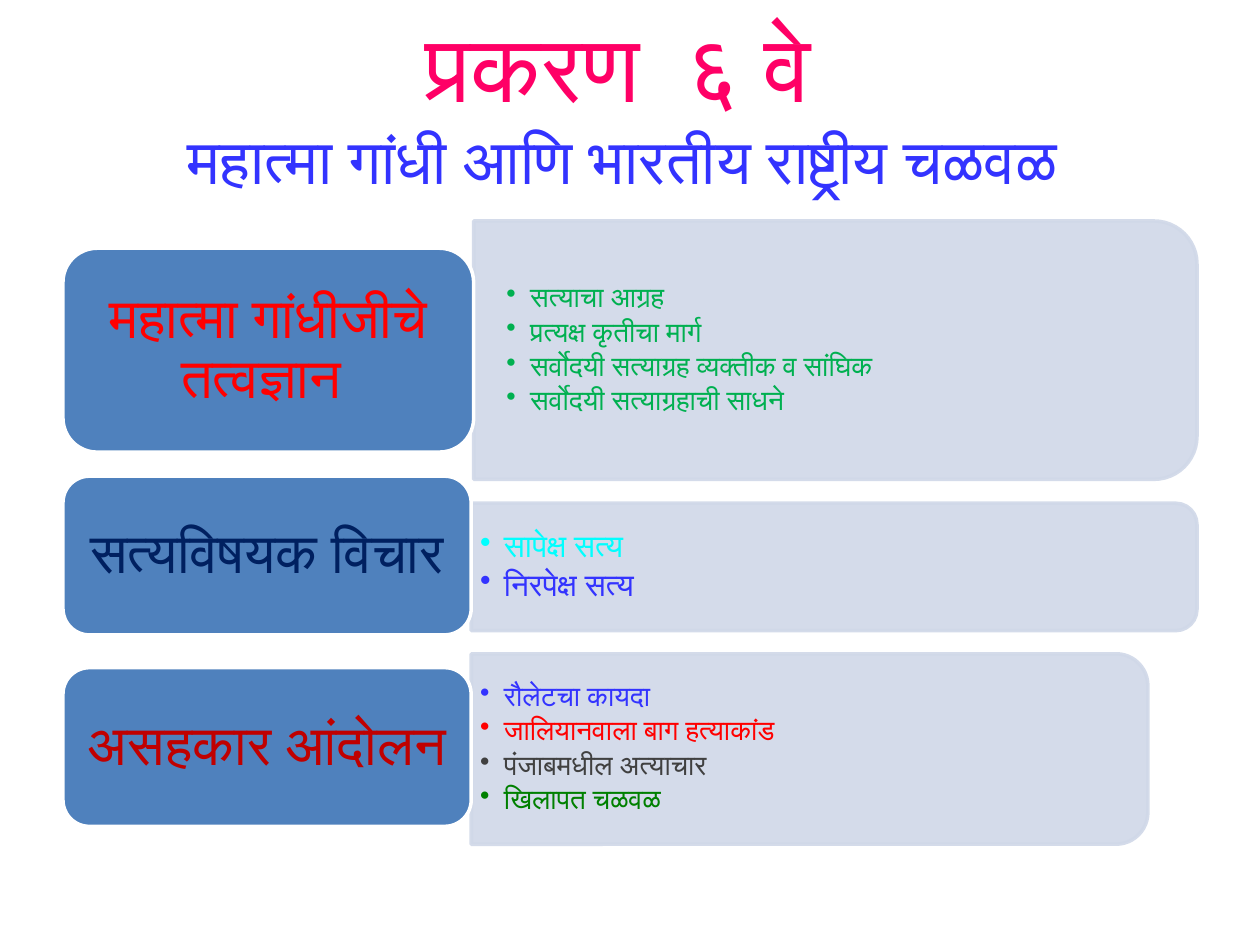
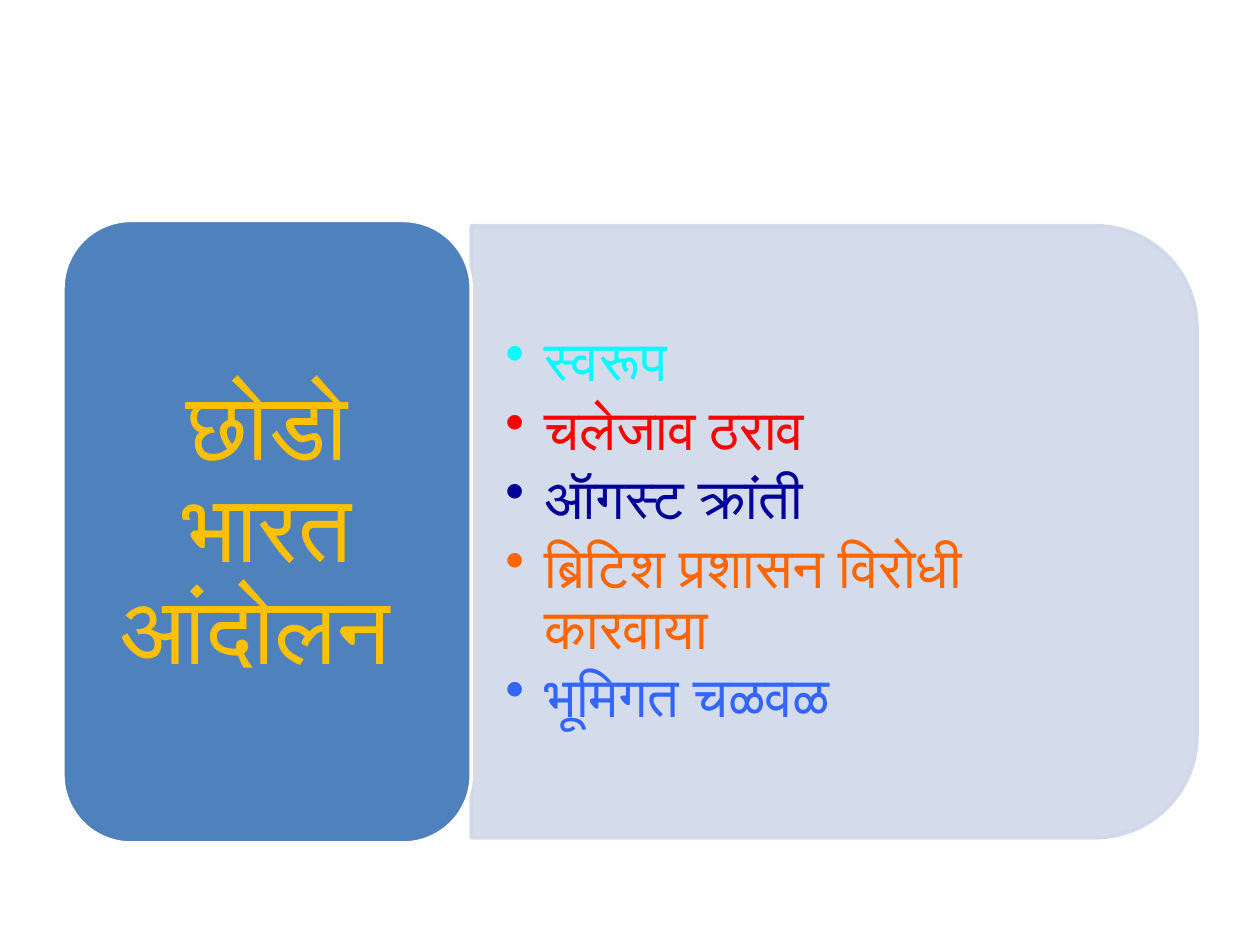
"""Builds two Marathi slides on Gandhi and the national movement."""
from dataclasses import dataclass

from lxml import etree
from pptx import Presentation
from pptx import util as u
from pptx.dml.color import RGBColor
from pptx.enum import shapes, text
from pptx.oxml.ns import qn


@dataclass(frozen=True)
class Theme:
    """Colours, type sizes and shared measures in centimetres."""
    font: str = "Calibri"
    label_fill: str = "4F81BD"
    panel_fill: str = "D0D8E8"
    white: str = "FFFFFF"
    pink: str = "FF0066"
    blue: str = "3333FF"
    red: str = "FF0000"
    green: str = "00B050"
    cyan: str = "00FFFF"
    navy: str = "002060"
    dark_red: str = "C00000"
    grey: str = "404040"
    forest: str = "008000"
    deep_blue: str = "000099"
    orange: str = "FF6600"
    sky: str = "3366FF"
    gold: str = "FFC000"
    chapter: int = 54
    subtitle: int = 36
    label: int = 32
    big_label: int = 54
    small: int = 16
    medium: int = 18
    large: int = 32
    line: int = 2
    left: float = 1.27
    line_spacing: float = 0.9
    corner_inset: float = 0.05


THEME = Theme()


@dataclass(frozen=True)
class Label:
    """The rounded heading box at the left of a row."""
    words: str
    color: str
    middle: float
    height: float
    width: float = 8.23
    size: int = THEME.label


@dataclass(frozen=True)
class Panel:
    """The pale bullet panel at the right of a row."""
    middle: float
    width: float
    height: float
    margin: float
    size: int
    bullets: tuple
    indent: float = 0.48


CHAPTER_ROWS = (
    (Label("महात्मा गांधीजीचे तत्वज्ञान ", THEME.red, 7.06, 4.11, width=8.28),
     Panel(7.06, 14.58, 5.21, 0.66, THEME.small, (
         ("सत्याचा आग्रह", THEME.green),
         ("प्रत्यक्ष कृतीचा मार्ग", THEME.green),
         ("सर्वोदयी सत्याग्रह व्यक्तीक व सांघिक", THEME.green),
         ("सर्वोदयी सत्याग्रहाची साधने", THEME.green)))),
    (Label("सत्यविषयक विचार ", THEME.navy, 11.2, 3.2),
     Panel(11.43, 14.63, 2.57, 0.18, THEME.medium, (
         ("सापेक्ष सत्य", THEME.cyan),
         ("निरपेक्ष सत्य", THEME.blue)))),
    (Label("असहकार आंदोलन ", THEME.dark_red, 15.06, 3.2),
     Panel(15.1, 13.64, 3.84, 0.18, THEME.small, (
         ("रौलेटचा कायदा", THEME.blue),
         ("जालियानवाला बाग हत्याकांड", THEME.red),
         ("पंजाबमधील अत्याचार", THEME.grey),
         ("खिलापत चळवळ", THEME.forest)))),
)
QUIT_INDIA_ROWS = (
    (Label("छोडो भारत आंदोलन ", THEME.gold, 10.72, 12.55, size=THEME.big_label),
     Panel(10.72, 14.63, 12.34, 0.69, THEME.large, (
         ("स्वरूप", THEME.cyan),
         ("चलेजाव ठराव", THEME.red),
         ("ऑगस्ट क्रांती", THEME.deep_blue),
         ("ब्रिटिश प्रशासन विरोधी कारवाया", THEME.orange),
         ("भूमिगत चळवळ", THEME.sky)), indent=0.79)),
)


def add_run(paragraph, words, size, color):
    """Add one formatted run to a paragraph."""
    run = paragraph.add_run()
    run.text = words
    run.font.name = THEME.font
    run.font.size = u.Pt(size)
    run.font.color.rgb = RGBColor.from_string(color)


def set_frame(frame, margin):
    """Wrap and centre a text frame vertically, with half margins above and below."""
    frame.word_wrap = True
    frame.auto_size = text.MSO_AUTO_SIZE.NONE
    frame.vertical_anchor = text.MSO_ANCHOR.MIDDLE
    frame.margin_left = frame.margin_right = u.Cm(margin)
    frame.margin_top = frame.margin_bottom = u.Cm(margin / 2)


def set_spacing(paragraph, size, share):
    """Set line spacing and a gap after the paragraph as a share of its type size."""
    paragraph.line_spacing = THEME.line_spacing
    paragraph.space_after = u.Pt(size * share)


def add_box(slide, kind, center_x, center_y, width, height, fill, line):
    """Add a filled and outlined preset shape placed by its centre."""
    shape = slide.shapes.add_shape(
        kind, u.Cm(center_x - width / 2), u.Cm(center_y - height / 2),
        u.Cm(width), u.Cm(height))
    shape.shadow.inherit = False
    shape.fill.solid()
    shape.fill.fore_color.rgb = RGBColor.from_string(fill)
    shape.line.color.rgb = RGBColor.from_string(line)
    shape.line.width = u.Pt(THEME.line)
    return shape


def add_bullet(paragraph, indent):
    """Give a paragraph a hanging round bullet."""
    properties = paragraph._p.get_or_add_pPr()
    properties.set("marL", str(u.Cm(indent)))
    properties.set("indent", str(-u.Cm(indent)))
    etree.SubElement(properties, qn("a:buChar"), char="•")


def add_panel(slide, panel, left):
    """Add a panel with rounded right corners and its bullet list."""
    shape = add_box(slide, shapes.MSO_SHAPE.ROUND_2_SAME_RECTANGLE,
                    left + panel.width / 2, panel.middle, panel.height, panel.width,
                    THEME.panel_fill, THEME.panel_fill)
    shape.rotation = 90
    for color in shape._element.spPr.iter(qn("a:srgbClr")):
        etree.SubElement(color, qn("a:alpha"), val="90000")

    inset = panel.height * THEME.corner_inset
    box = slide.shapes.add_textbox(
        u.Cm(left), u.Cm(panel.middle - panel.height / 2 + inset),
        u.Cm(panel.width - inset), u.Cm(panel.height - 2 * inset))
    frame = box.text_frame
    set_frame(frame, panel.margin)
    for index, (words, color) in enumerate(panel.bullets):
        paragraph = frame.add_paragraph() if index else frame.paragraphs[0]
        paragraph.level = 1
        set_spacing(paragraph, panel.size, 0.15)
        add_bullet(paragraph, panel.indent)
        add_run(paragraph, words, panel.size, color)


def add_label(slide, label):
    """Add a rounded heading box with centred text."""
    shape = add_box(slide, shapes.MSO_SHAPE.ROUNDED_RECTANGLE,
                    THEME.left + label.width / 2, label.middle, label.width, label.height,
                    THEME.label_fill, THEME.white)
    set_frame(shape.text_frame, label.size * 0.0105)
    paragraph = shape.text_frame.paragraphs[0]
    paragraph.alignment = text.PP_ALIGN.CENTER
    set_spacing(paragraph, label.size, 0.35)
    add_run(paragraph, label.words, label.size, label.color)


def add_rows(slide, rows):
    """Add each panel and the label that stands at its left edge."""
    for label, panel in rows:
        add_panel(slide, panel, THEME.left + label.width)
        add_label(slide, label)


def set_title(slide):
    """Place the title and write its chapter and subject lines."""
    title = slide.shapes.title
    title.left, title.top = u.Cm(THEME.left), u.Cm(0.76)
    title.width, title.height = u.Cm(22.86), u.Cm(2.62)
    set_frame(title.text_frame, 0.25)
    paragraph = title.text_frame.paragraphs[0]
    paragraph.alignment = text.PP_ALIGN.CENTER
    add_run(paragraph, "प्रकरण  ६ वे ", THEME.chapter, THEME.pink)
    paragraph.add_line_break()
    add_run(paragraph, "महात्मा गांधी आणि भारतीय राष्ट्रीय चळवळ ", THEME.subtitle, THEME.blue)


def main():
    """Build and save the presentation."""
    presentation = Presentation()
    presentation.slide_width, presentation.slide_height = u.Cm(25.4), u.Cm(19.05)
    title_only, blank = presentation.slide_layouts[5], presentation.slide_layouts[6]

    chapter = presentation.slides.add_slide(title_only)
    set_title(chapter)
    add_rows(chapter, CHAPTER_ROWS)

    quit_india = presentation.slides.add_slide(blank)
    add_rows(quit_india, QUIT_INDIA_ROWS)

    presentation.save("out.pptx")


if __name__ == "__main__":
    main()
